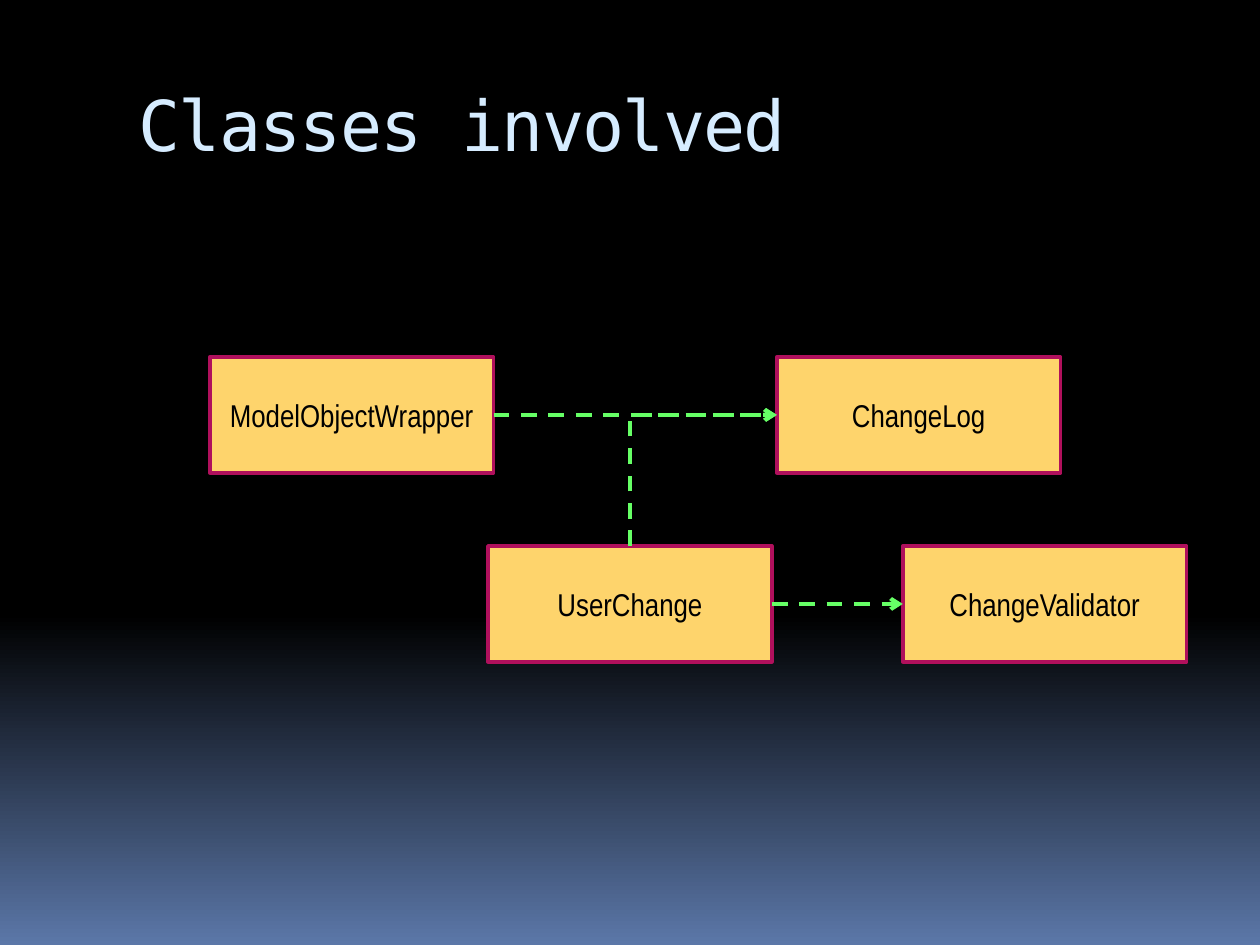
from copy import deepcopy

from lxml import etree
from pptx import Presentation, util as u
from pptx.dml.color import RGBColor
from pptx.enum import dml, shapes, text
from pptx.oxml.ns import qn

COLORS = {
    "night": "000000",
    "horizon": "5B77A8",
    "title": "D6ECFF",
    "box": "FED46C",
    "border": "B0105C",
    "label": "000000",
    "arrow": "66FF66",
}
BOX_WIDTH, BOX_HEIGHT = u.Cm(5.72), u.Cm(2.33)
ROWS = {"upper": u.Cm(7.2), "lower": u.Cm(11.01)}
BOXES = {
    "ModelObjectWrapper": (u.Cm(4.23), "upper"),
    "ChangeLog": (u.Cm(15.66), "upper"),
    "UserChange": (u.Cm(9.84), "lower"),
    "ChangeValidator": (u.Cm(18.2), "lower"),
}
TOP, LEFT, RIGHT = 0, 1, 3  # connection sites of a rectangle


def color(name):
    return RGBColor.from_string(COLORS[name])


def paint_background(slide):
    """Black down to 65 %, then fading to blue at the bottom edge."""
    fill = slide.background.fill
    fill.gradient()
    fill.gradient_angle = 270
    start, end = fill.gradient_stops
    start.color.rgb, start.position = color("night"), 0
    end.color.rgb, end.position = color("horizon"), 1
    stops = slide._element.find(".//" + qn("a:gsLst"))
    middle = deepcopy(stops[0])
    middle.set("pos", "65000")
    stops.insert(1, middle)


def write(shape, content, *, font, size, ink, align, anchor,
          inset_x, inset_y, spacing=None):
    """Put one formatted line of text into a shape; spacing is in points."""
    frame = shape.text_frame
    frame.word_wrap = True
    frame.vertical_anchor = anchor
    frame.margin_left = frame.margin_right = inset_x
    frame.margin_top = frame.margin_bottom = inset_y
    paragraph = frame.paragraphs[0]
    paragraph.alignment = align
    run = paragraph.add_run()
    run.text = content
    run.font.name = font
    run.font.size = u.Pt(size)
    run.font.color.rgb = color(ink)
    if spacing is not None:
        run._r.get_or_add_rPr().set("spc", str(int(spacing * 100)))


def add_title(slide, content):
    box = slide.shapes.add_textbox(u.Cm(2.54), u.Cm(1.42), u.Cm(21.59), u.Cm(2.54))
    write(box, content, font="DejaVu Sans Mono", size=40, ink="title",
          align=text.PP_ALIGN.LEFT, anchor=text.MSO_ANCHOR.TOP,
          inset_x=u.Cm(0.25), inset_y=u.Cm(0.23), spacing=-1)


def add_class_box(slide, name, left, row):
    box = slide.shapes.add_shape(shapes.MSO_SHAPE.RECTANGLE, left, ROWS[row],
                                 BOX_WIDTH, BOX_HEIGHT)
    box.shadow.inherit = False
    box.fill.solid()
    box.fill.fore_color.rgb = color("box")
    box.line.color.rgb = color("border")
    box.line.width = u.Pt(2.25)
    write(box, name, font="Arial Narrow", size=18, ink="label",
          align=text.PP_ALIGN.CENTER, anchor=text.MSO_ANCHOR.MIDDLE,
          inset_x=0, inset_y=u.Cm(0.13))
    return box


def add_dependency(slide, source, site, target):
    """Dashed arrow from a site of the source to the target's left side."""
    connector = slide.shapes.add_connector(shapes.MSO_CONNECTOR.ELBOW, 0, 0, 0, 0)
    connector.begin_connect(source, site)
    connector.end_connect(target, LEFT)
    connector.line.color.rgb = color("arrow")
    connector.line.width = u.Pt(2.25)
    connector.line.dash_style = dml.MSO_LINE.DASH
    etree.SubElement(connector.line._ln, qn("a:tailEnd"), type="arrow")
    etree.SubElement(connector._element.spPr, qn("a:effectLst"))
    if site == TOP:
        bend_once(connector)


def bend_once(connector):
    """Route the connector straight up, then right, with a single corner."""
    width, height = connector.width, connector.height
    connector.left += (width - height) // 2
    connector.top += (height - width) // 2
    connector.width, connector.height = height, width
    properties = connector._element.spPr
    properties.find(qn("a:prstGeom")).set("prst", "bentConnector2")
    transform = properties.find(qn("a:xfrm"))
    for key, value in (("rot", "5400000"), ("flipH", "1"), ("flipV", "1")):
        transform.set(key, value)


def main():
    presentation = Presentation()
    presentation.slide_width, presentation.slide_height = u.Cm(25.4), u.Cm(19.05)
    slide = presentation.slides.add_slide(presentation.slide_layouts[6])
    paint_background(slide)
    add_title(slide, "Classes involved")
    boxes = {name: add_class_box(slide, name, left, row)
             for name, (left, row) in BOXES.items()}
    for source, site, target in (
        ("UserChange", RIGHT, "ChangeValidator"),
        ("ModelObjectWrapper", RIGHT, "ChangeLog"),
        ("UserChange", TOP, "ChangeLog"),
    ):
        add_dependency(slide, boxes[source], site, boxes[target])
    presentation.save("out.pptx")


if __name__ == "__main__":
    main()
